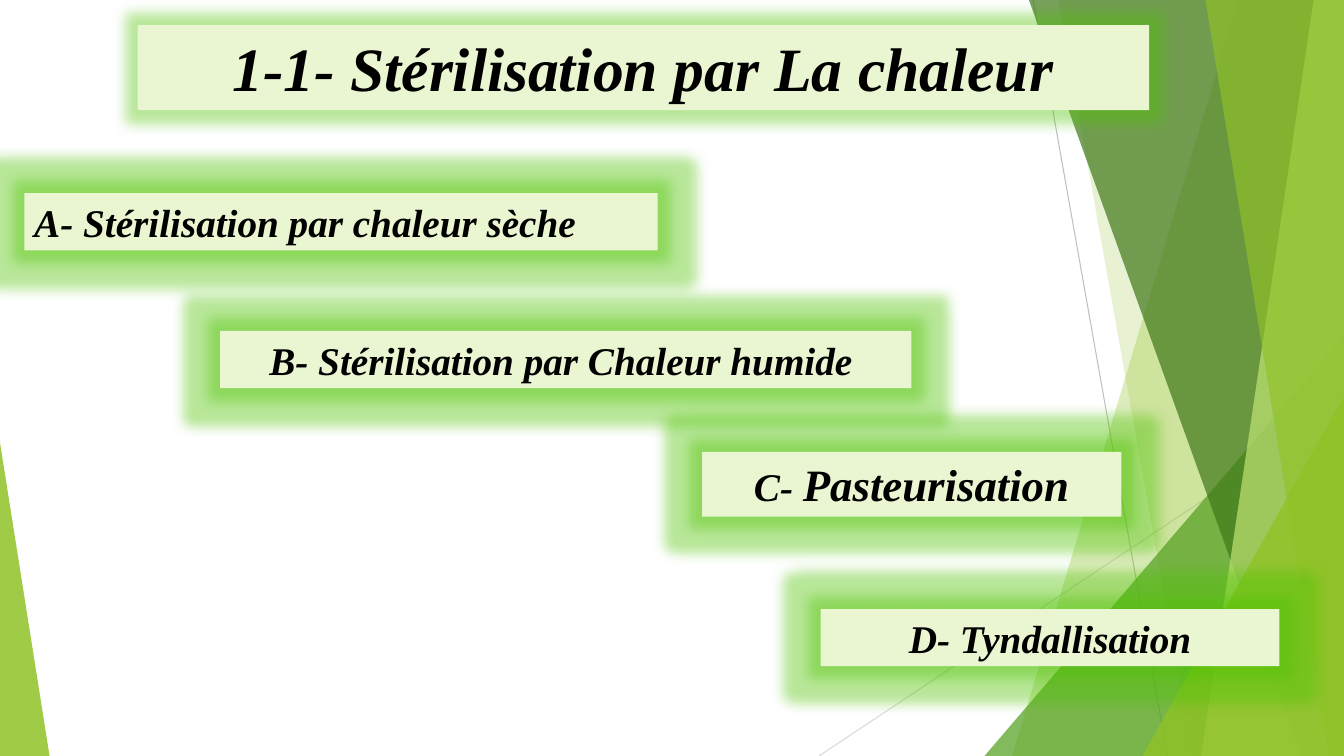
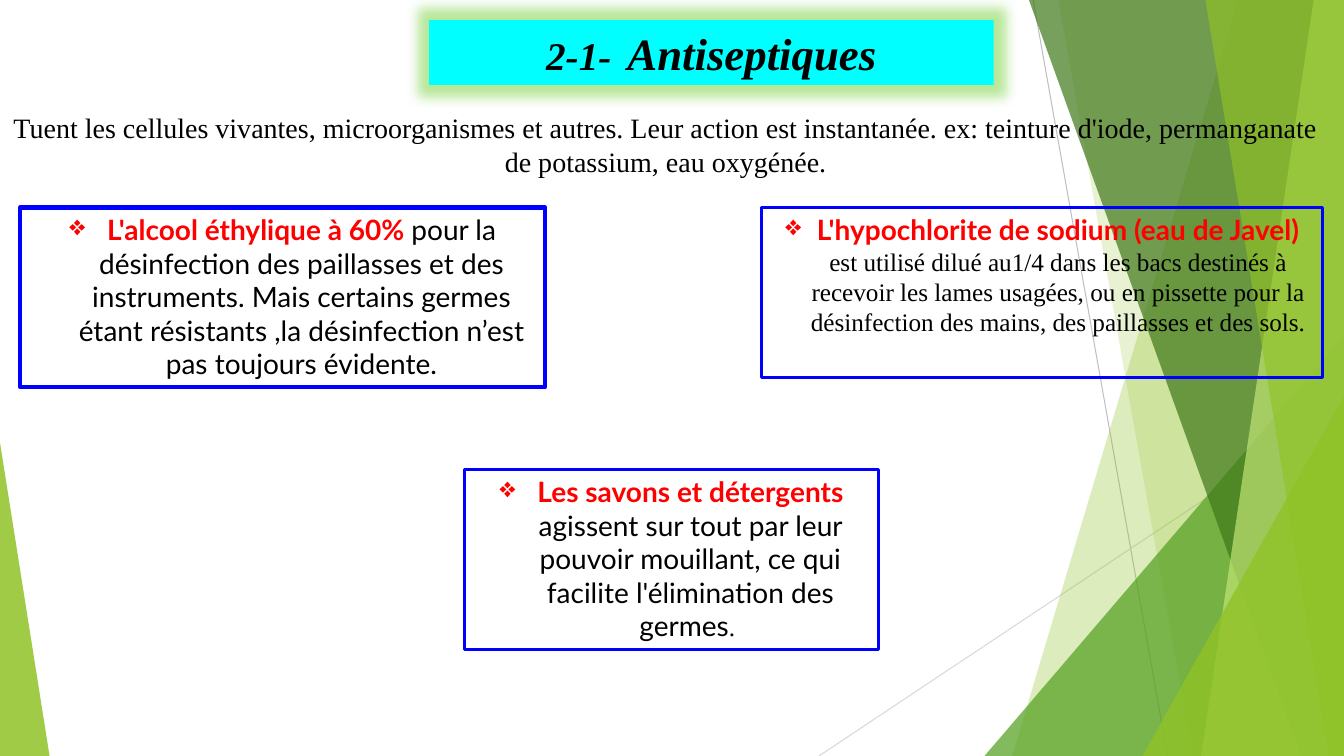
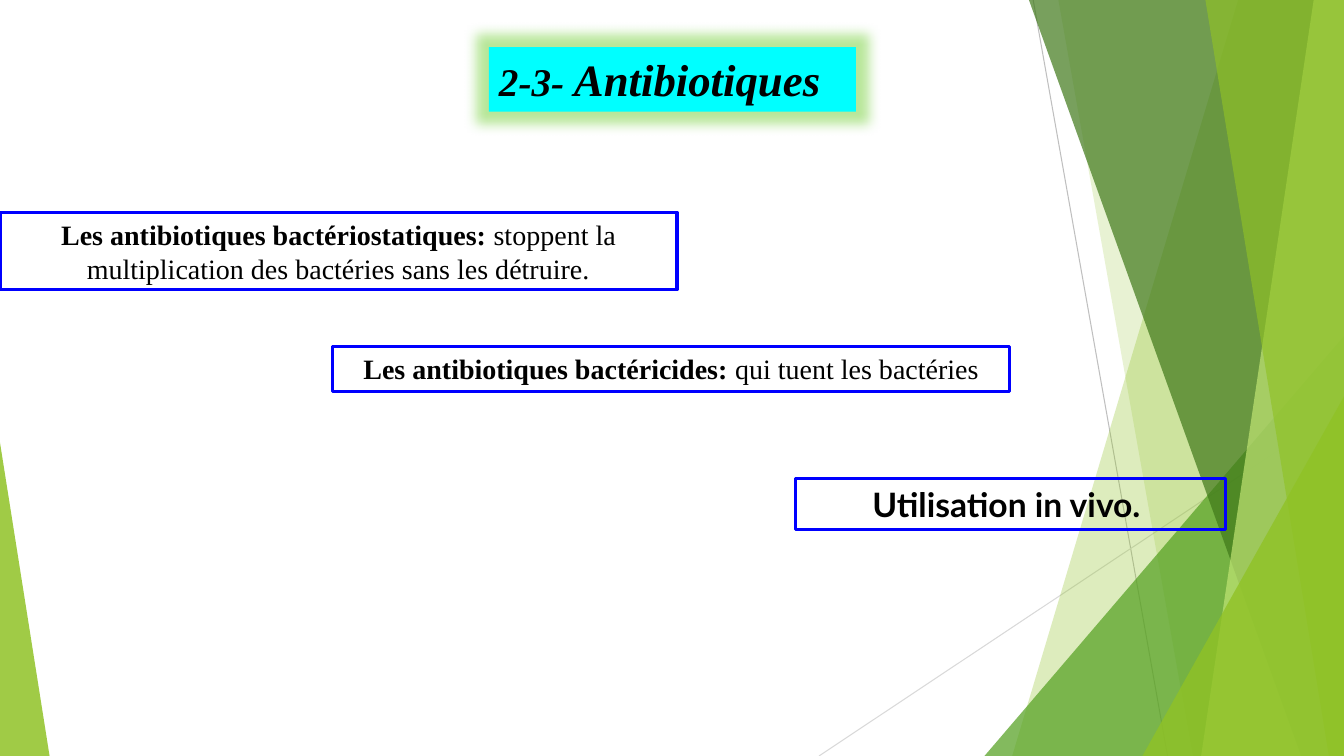
import pptx
import pptx.util
import pptx.dml.color
import pptx.enum.shapes
import pptx.enum.text
import pptx.oxml.ns
from lxml import etree

RGB = pptx.dml.color.RGBColor
Pt = pptx.util.Pt
qn = pptx.oxml.ns.qn
KIND = pptx.enum.shapes.MSO_SHAPE
ALIGN = pptx.enum.text.PP_ALIGN
TOP = pptx.enum.text.MSO_ANCHOR.TOP

LIME = RGB(0x90, 0xC2, 0x26)
PALE = RGB(0xC0, 0xE4, 0x74)
GREEN = RGB(0x54, 0xA0, 0x21)
DARK = RGB(0x3F, 0x78, 0x19)
HALO = RGB(0x4E, 0xC3, 0x02)
CREAM = RGB(0xEA, 0xF6, 0xD1)
CYAN = RGB(0x00, 0xFF, 0xFF)
BLUE = RGB(0x00, 0x00, 0xFF)
RED = RGB(0xFF, 0x00, 0x00)
BLACK = RGB(0x00, 0x00, 0x00)
GREY = RGB(0xBF, 0xBF, 0xBF)
MIST = RGB(0xD9, 0xD9, 0xD9)

SERIF, SANS = "Times New Roman", "Lato"
COLS, ROWS = 160, 90
CELL = pptx.util.Inches(1) // 12


def cells(*counts):
    return [round(n * CELL) for n in counts]


def fade(shape, color, alpha):
    """Fill a shape with a colour that is alpha percent opaque."""
    shape.shadow.inherit = False
    shape.line.fill.background()
    shape.fill.solid()
    shape.fill.fore_color.rgb = color
    tone = shape.element.spPr.find(qn("a:solidFill"))[0]
    etree.SubElement(tone, qn("a:alpha"), val=str(alpha * 1000))


def style(font, size=None, face=None, color=None, bold=None, slant=None):
    """Set only the font traits that are given."""
    if size:
        font.size = Pt(size)
    if face:
        font.name = face
    if color is not None:
        font.color.rgb = color
    if bold is not None:
        font.bold = bold
    if slant is not None:
        font.italic = slant


class Deck:
    def __init__(self):
        self.file = pptx.Presentation()
        self.file.slide_width, self.file.slide_height = cells(COLS, ROWS)
        self.slide = None

    def page(self, layout=5):
        self.slide = self.file.slides.add_slide(self.file.slide_layouts[layout])

    def line(self, start, end, color):
        rule = self.slide.shapes.add_connector(
            pptx.enum.shapes.MSO_CONNECTOR.STRAIGHT, *cells(*start, *end))
        rule.line.color.rgb = color
        rule.line.width = Pt(0.75)
        etree.SubElement(rule.element.spPr, qn("a:effectLst"))

    def blade(self, top, foot, color, alpha):
        """Full-height band from a slanted left edge to the right side."""
        edge = self.slide.shapes.build_freeform(*cells(top, 0), scale=1.0)
        edge.add_line_segments(
            [cells(COLS, 0), cells(COLS, ROWS), cells(foot, ROWS)], close=True)
        fade(edge.convert_to_shape(), color, alpha)

    def wedge(self, left, top, width, tip, color, alpha):
        """Triangle standing on the slide's lower edge."""
        shape = self.slide.shapes.add_shape(
            KIND.ISOSCELES_TRIANGLE, *cells(left, top, width, ROWS - top))
        shape.adjustments[0] = tip
        fade(shape, color, alpha)

    def decor(self):
        """Draw the shared backdrop and hand it over to the slide master."""
        self.line((123, 0), (139, ROWS), GREY)
        self.line((COLS, 48.4), (97.5, ROWS), MIST)
        self.blade(147.4, 120.5, LIME, 30)
        self.blade(126, 142, LIME, 20)
        self.wedge(117.2, 40, 42.8, 1, GREEN, 72)
        self.blade(122.5, 154.9, DARK, 70)
        self.blade(156.4, 143, PALE, 70)
        self.blade(143.5, 158.2, LIME, 65)
        self.wedge(136, 47.2, 24, 1, LIME, 80)
        self.wedge(0, 52.7, 5.9, 0, LIME, 85)
        tree = self.file.slide_master.element.cSld.spTree
        art = [s.element for s in self.slide.shapes if not s.is_placeholder]
        for spot, item in enumerate(art, 2):
            tree.insert(spot, item)

    def put(self, shape, at, runs, align, bullet=0, **font):
        """Place a shape and fill it with one paragraph of (text, traits) runs."""
        shape.left, shape.top, shape.width, shape.height = cells(*at)
        frame = shape.text_frame
        frame.word_wrap = True
        frame.auto_size = pptx.enum.text.MSO_AUTO_SIZE.NONE
        frame.vertical_anchor = TOP
        para = frame.paragraphs[0]
        para.alignment = align
        para.space_before = Pt(0)
        props = para._p.get_or_add_pPr()
        indent = cells(bullet)[0]
        props.set("marL", str(indent))
        props.set("indent", str(-indent))
        if bullet:
            etree.SubElement(props, qn("a:buChar"), char="❖")
        else:
            etree.SubElement(props, qn("a:buNone"))
        style(para.font, **font)
        for text, traits in runs:
            run = para.add_run()
            run.text = text
            style(run.font, **traits)

    def glow(self, shape, at, runs, fill, size, align):
        self.put(shape, at, runs, align, size=size, face=SERIF,
                 color=BLACK, bold=True, slant=True)
        shape.fill.solid()
        shape.fill.fore_color.rgb = fill
        shape.line.fill.background()
        shape.shadow.inherit = False
        effects = shape.element.spPr.find(qn("a:effectLst"))
        halo = etree.SubElement(effects, qn("a:glow"), rad=str(Pt(18)))
        tone = etree.SubElement(halo, qn("a:srgbClr"), val=str(HALO))
        etree.SubElement(tone, qn("a:alpha"), val="40000")

    def title(self, at, *runs, fill=CYAN, size=28, align=ALIGN.CENTER):
        self.glow(self.slide.shapes.title, at, runs, fill, size, align)

    def tile(self, at, *runs, align=ALIGN.CENTER):
        shape = self.slide.shapes.add_shape(KIND.RECTANGLE, *cells(*at))
        self.glow(shape, at, runs, CREAM, 28, align)

    def body(self, at, *runs):
        self.put(self.slide.placeholders[1], at, runs, ALIGN.CENTER,
                 size=20, face=SERIF, color=BLACK)

    def box(self, at, *runs, edge=2.25, bullet=0, size=20, face=SERIF):
        shape = self.slide.shapes.add_textbox(*cells(*at))
        self.put(shape, at, runs, ALIGN.CENTER, bullet,
                 size=size, face=face, color=BLACK)
        shape.line.color.rgb = BLUE
        shape.line.width = Pt(edge)


def main():
    deck = Deck()
    big, bold = {"size": 32}, {"bold": True}
    key = {"color": RED, "bold": True}
    small = {"size": 18, "face": SERIF}

    deck.page()
    deck.decor()
    deck.title((16.4, 3, 120.4, 10.1), ("1-1- Stérilisation par La chaleur", {}),
               fill=CREAM, size=44)
    deck.tile((2.9, 23, 75.4, 6.8), ("A- Stérilisation par chaleur sèche", {}),
              align=ALIGN.LEFT)
    deck.tile((26.2, 39.4, 82.3, 6.8), ("B- Stérilisation par Chaleur humide ", {}))
    deck.tile((83.6, 53.8, 49.9, 7.7), ("C- ", {}), ("Pasteurisation", big))
    deck.tile((97.7, 72.5, 54.6, 6.8), ("D- Tyndallisation", {}))

    deck.page(1)
    deck.title((51.1, 2.4, 67.2, 7.7), ("2-1- ", {}),
               (" ", {"size": 18, "bold": False, "slant": False}),
               ("Antiseptiques", big))
    deck.body((0, 12.6, 158.5, 9.2),
              ("Tuent les cellules vivantes, microorganismes et autres. Leur action "
               "est instantanée. ex: teinture d'iode, permanganate de potassium, "
               "eau oxygénée.", {}))
    deck.box((2.4, 24.7, 62.5, 21.4), ("L'alcool éthylique à 60% ", key),
             ("pour la désinfection des paillasses et des instruments. Mais "
              "certains germes étant résistants ,la désinfection n’est pas "
              "toujours évidente.", {}), edge=3, bullet=4.5, face=SANS)
    deck.box((90.7, 24.7, 66.8, 20.2),
             ("L'hypochlorite de sodium (eau de Javel) ", key),
             ("est utilisé dilué au1/4 dans les bacs destinés à recevoir les "
              "lames usagées, ou en pissette pour la désinfection des mains, "
              "des paillasses et des sols.", small), bullet=3.75, face=SANS)
    deck.box((55.3, 55.9, 49.3, 21.4), ("Les savons et détergents ", key),
             ("agissent sur tout par leur pouvoir mouillant, ce qui facilite "
              "l'élimination des germes", {}), (". ", small),
             bullet=4.5, face=SANS)

    deck.page()
    deck.title((58.2, 5.6, 43.7, 7.7), ("2-3- ", {}), ("Antibiotiques", big),
               align=ALIGN.LEFT)
    deck.box((0, 25.3, 80.6, 9.2), ("Les antibiotiques bactériostatiques: ", bold),
             ("stoppent la multiplication des bactéries sans les détruire.", {}))
    deck.box((39.6, 41.3, 80.6, 5.3), ("Les antibiotiques bactéricides: ", bold),
             ("qui tuent les bactéries", {}))
    deck.box((94.7, 57, 51.2, 6), ("Utilisation in vivo. ", bold),
             size=24, face=SANS)

    deck.file.save("out.pptx")


if __name__ == "__main__":
    main()
